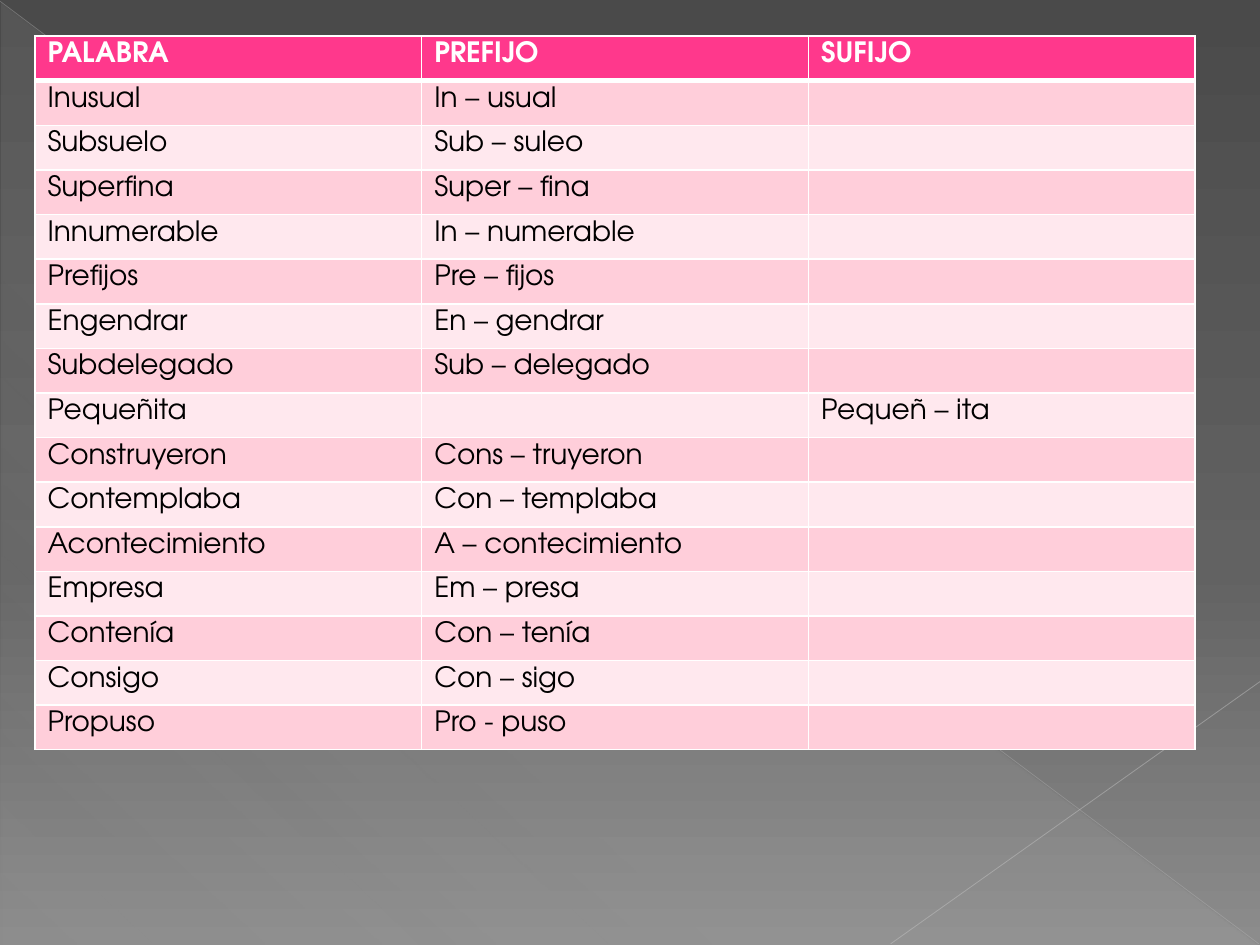
import pptx
import pptx.util
import pptx.dml.color
import pptx.enum.shapes
import pptx.oxml
import pptx.oxml.ns
import lxml.etree

Pt = pptx.util.Pt
RGB = pptx.dml.color.RGBColor
qn = pptx.oxml.ns.qn

FONT = "TeX Gyre Adventor"
WHITE = RGB(0xFF, 0xFF, 0xFF)
BLACK = RGB(0x00, 0x00, 0x00)
PINK = RGB(0xFF, 0x38, 0x8C)
ROSE = RGB(0xFF, 0xCE, 0xDA)
BLUSH = RGB(0xFF, 0xE8, 0xEE)
DARK = RGB(0x4A, 0x4A, 0x4A)
SLATE = RGB(0x62, 0x62, 0x62)
GREY = RGB(0x8C, 0x8C, 0x8C)
PALE = RGB(0xD2, 0xD2, 0xD2)
SILVER = RGB(0xBF, 0xBF, 0xBF)
ASH = RGB(0xC6, 0xC6, 0xC6)

HEAD = ["PALABRA", "PREFIJO", "SUFIJO"]
WORDS = [
    ("Inusual", "In – usual", ""),
    ("Subsuelo", "Sub – suleo", ""),
    ("Superfina", "Super – fina", ""),
    ("Innumerable", "In – numerable", ""),
    ("Prefijos", "Pre – fijos", ""),
    ("Engendrar", "En – gendrar", ""),
    ("Subdelegado", "Sub – delegado", ""),
    ("Pequeñita", "", "Pequeñ – ita"),
    ("Construyeron", "Cons – truyeron", ""),
    ("Contemplaba", "Con – templaba", ""),
    ("Acontecimiento", "A – contecimiento", ""),
    ("Empresa", "Em – presa", ""),
    ("Contenía", "Con – tenía", ""),
    ("Consigo", "Con – sigo", ""),
    ("Propuso", "Pro - puso", ""),
]


def add(parent, tag, **attrs):
    node = lxml.etree.SubElement(parent, qn(tag))
    for key, value in attrs.items():
        node.set(key, str(value))
    return node


def tint(parent, color, alpha=100):
    node = add(parent, "a:srgbClr", val=color)
    if alpha < 100:
        add(node, "a:alpha", val=alpha * 1000)


def blend(fill, root, stops, angle):
    """Fill with a gradient of (position, colour, opacity) stops."""
    fill.gradient()
    grad = next(root.iter(qn("a:gradFill")))
    for child in list(grad):
        grad.remove(child)
    group = add(grad, "a:gsLst")
    for place, color, alpha in stops:
        tint(add(group, "a:gs", pos=place * 1000), color, alpha)
    add(grad, "a:lin", ang=angle * 60000, scaled=0)


def ray(slide, start, end, color, width, alpha):
    line = slide.shapes.add_connector(
        pptx.enum.shapes.MSO_CONNECTOR.STRAIGHT,
        *[Pt(v) for v in (*start, *end)])
    line.line.color.rgb = color
    line.line.width = Pt(width)
    shade = next(line.line._ln.iter(qn("a:srgbClr")))
    add(shade, "a:alpha", val=alpha * 1000)
    add(line._element.spPr, "a:effectLst")


def backdrop(slide, left, top, width, height):
    # Grey gradient behind everything
    blend(slide.background.fill, slide._element,
          [(0, DARK, 100), (60, SLATE, 100), (100, GREY, 100)], 90)

    # Faint triangle below the diagonal
    wedge = slide.shapes.add_shape(
        pptx.enum.shapes.MSO_SHAPE.RIGHT_TRIANGLE,
        Pt(left + 0.7), Pt(top + 1.4), Pt(width - 1.4), Pt(height - 1.4))
    wedge.shadow.inherit = False
    wedge.line.fill.background()
    blend(wedge.fill, wedge._element.spPr,
          [(0, PALE, 10), (70, PALE, 8), (100, PALE, 1)], 133)

    # Crossing lines
    right, base = left + width, top + height - 0.7
    ray(slide, (left, top + 0.7), (right - 0.7, base), SILVER, 0.39, 35)
    ray(slide, (right, top + 389.5), (left + 509, base), ASH, 0.47, 45)


def edge(cell, **widths):
    """Draw white borders before the fill, in schema order."""
    props = cell._tc.get_or_add_tcPr()
    for i, side in enumerate("LRTB"):
        line = pptx.oxml.parse_xml(
            f'<a:ln{side} {pptx.oxml.ns.nsdecls("a")}/>')
        line.set("w", str(Pt(widths.get(side, 1))))
        tint(add(line, "a:solidFill"), WHITE)
        props.insert(i, line)


def grid(slide, left, top, width, height):
    rows = [HEAD, *WORDS]
    table = slide.shapes.add_table(
        len(rows), len(HEAD), Pt(left), Pt(top), Pt(width), Pt(height)).table
    for col in table.columns:
        col.width = Pt(width / len(HEAD))
    for r, words in enumerate(rows):
        table.rows[r].height = Pt(height / len(rows))
        for c, word in enumerate(words):
            cell = table.cell(r, c)
            # Top inset keeps letters clear of the rule above
            cell.margin_top = Pt(3.4 if word else 0)
            cell.margin_bottom = 0
            cell.fill.solid()
            cell.fill.fore_color.rgb = (
                PINK if r == 0 else ROSE if r % 2 else BLUSH)
            # Thick rule under the header
            edge(cell, B=3 if r == 0 else 1, T=3 if r == 1 else 1)
            if word:
                cell.text_frame.text = word
                font = cell.text_frame.paragraphs[0].runs[0].font
                font.name, font.size, font.bold = FONT, Pt(16), r == 0
                font.color.rgb = BLACK if r else WHITE


def main():
    deck = pptx.Presentation()
    deck.slide_width, deck.slide_height = Pt(720), Pt(540)
    slide = deck.slides.add_slide(deck.slide_layouts[6])
    backdrop(slide, 0, 0, 720, 540)
    grid(slide, 20, 20.7, 663, 408)
    deck.save("out.pptx")


if __name__ == "__main__":
    main()
